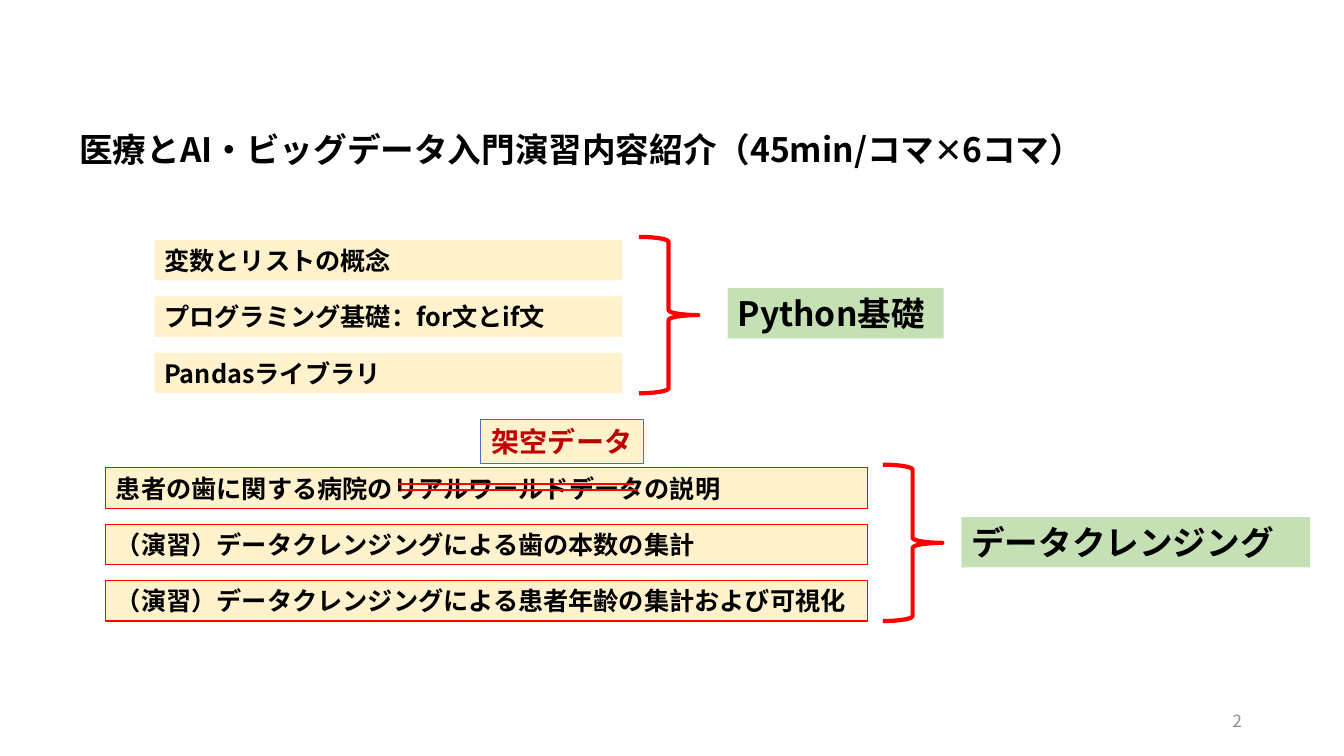
from dataclasses import dataclass

from lxml import etree
from pptx import Presentation
from pptx.dml.color import RGBColor
from pptx.enum.shapes import MSO_CONNECTOR, MSO_SHAPE
from pptx.enum.text import MSO_ANCHOR, MSO_AUTO_SIZE, PP_ALIGN
from pptx.oxml.ns import qn
from pptx.util import Cm, Pt

RECTANGLE, BRACE = MSO_SHAPE.RECTANGLE, MSO_SHAPE.RIGHT_BRACE
STRAIGHT = MSO_CONNECTOR.STRAIGHT
LEFT, CENTER, RIGHT = PP_ALIGN.LEFT, PP_ALIGN.CENTER, PP_ALIGN.RIGHT
TOP, MIDDLE = MSO_ANCHOR.TOP, MSO_ANCHOR.MIDDLE
NO_RESIZE = MSO_AUTO_SIZE.NONE

FONT = "Noto Sans CJK JP"
BLACK, RED, DARK_RED, BLUE, GRAY = "000000", "FF0000", "C00000", "4472C4", "8C8C8C"
CREAM, GREEN = "FFF2CC", "C5E0B4"
ROW_HEIGHT, ROW_PITCH = 1.02, 1.42
LABEL_HEIGHT = 1.27
BRACE_WIDTH, BRACE_HEIGHT, BRACE_RISE = 1.5, 3.94, 0.08


@dataclass
class Topic:
    """A column of rows, gathered by a brace under one label."""
    left: float
    top: float
    width: float
    rows: list[str]
    brace_left: float
    label: str
    label_left: float
    label_top: float
    label_width: float
    outline: str | None = None


@dataclass
class Strike:
    left: float
    right: float
    height: float


TOPICS = [
    Topic(3.89, 6.05, 11.79,
          ["変数とリストの概念", "プログラミング基礎：for文とif文", "Pandasライブラリ"],
          16.1, "Python基礎", 18.34, 7.26, 5.44),
    Topic(2.67, 11.79, 19.2,
          ["患者の歯に関する病院のリアルワールドデータの説明",
           "（演習）データクレンジングによる歯の本数の集計",
           "（演習）データクレンジングによる患者年齢の集計および可視化"],
          22.25, "データクレンジング", 24.23, 13.03, 8.79, RED),
]
STRIKES = [Strike(10.03, 15.98, 12.19), Strike(10.11, 16.08, 12.34)]


def color(value: str) -> RGBColor:
    return RGBColor.from_string(value)


def write(box, text: str, *, size: float, ink: str = BLACK, bold: bool = True,
          align=LEFT, anchor=MIDDLE, line_height: float | None = None) -> None:
    frame = box.text_frame
    frame.word_wrap = True
    frame.auto_size = NO_RESIZE
    frame.vertical_anchor = anchor
    frame.margin_left = Cm(0.25)
    frame.margin_right = Cm(0) if align == LEFT else Cm(0.25)
    frame.margin_top = frame.margin_bottom = Cm(0.13)
    para = frame.paragraphs[0]
    para.alignment = align
    if line_height:
        para.line_spacing = Pt(line_height)
    span = para.add_run()
    span.text = text
    span.font.name = FONT
    span.font.size = Pt(size)
    span.font.bold = bold
    span.font.color.rgb = color(ink)
    # Japanese glyphs take their own typeface entry
    east_asian = etree.SubElement(span.font._element, qn("a:ea"))
    east_asian.set("typeface", FONT)


def add_box(page, kind, left: float, top: float, width: float, height: float, *,
            fill: str | None = None, outline: str | None = None,
            line_width: float = 0.75):
    box = page.shapes.add_shape(kind, Cm(left), Cm(top), Cm(width), Cm(height))
    box.shadow.inherit = False
    if fill:
        box.fill.solid()
        box.fill.fore_color.rgb = color(fill)
    else:
        box.fill.background()
    if outline:
        box.line.color.rgb = color(outline)
        box.line.width = Pt(line_width)
    else:
        box.line.fill.background()
    return box


def add_topic(page, topic: Topic) -> None:
    for index, text in enumerate(topic.rows):
        row = add_box(page, RECTANGLE, topic.left, topic.top + index * ROW_PITCH,
                      topic.width, ROW_HEIGHT, fill=CREAM, outline=topic.outline)
        write(row, text, size=18)
    label = add_box(page, RECTANGLE, topic.label_left, topic.label_top,
                    topic.label_width, LABEL_HEIGHT, fill=GREEN)
    write(label, topic.label, size=24)
    add_box(page, BRACE, topic.brace_left, topic.top - BRACE_RISE,
            BRACE_WIDTH, BRACE_HEIGHT, outline=RED, line_width=3)


def add_strike(page, strike: Strike) -> None:
    line = page.shapes.add_connector(STRAIGHT, Cm(strike.left), Cm(strike.height),
                                     Cm(strike.right), Cm(strike.height))
    line.line.color.rgb = color(RED)
    line.line.width = Pt(1.5)
    etree.SubElement(line._element.spPr, qn("a:effectLst"))


def main() -> None:
    deck = Presentation()
    deck.slide_width, deck.slide_height = Cm(33.87), Cm(19.05)
    page = deck.slides.add_slide(deck.slide_layouts[5])

    # Title
    title = page.shapes.title
    title.left, title.top = Cm(1.75), Cm(3.12)
    title.width, title.height = Cm(26.21), Cm(1.27)
    write(title, "医療とAI・ビッグデータ入門演習内容紹介（45min/コマ✕6コマ）",
          size=24, anchor=TOP, line_height=28.8)

    # Topics with braces and labels
    for topic in TOPICS:
        add_topic(page, topic)

    # Correction above the struck-out words
    correction = add_box(page, RECTANGLE, 12.12, 10.57, 4.09, 1.12,
                         fill=CREAM, outline=BLUE)
    write(correction, "架空データ", size=20, ink=DARK_RED, align=CENTER)
    for strike in STRIKES:
        add_strike(page, strike)

    # Page number
    number = page.shapes.add_textbox(Cm(23.93), Cm(17.65), Cm(7.62), Cm(1.02))
    write(number, "2", size=12, ink=GRAY, bold=False, align=RIGHT)

    deck.save("out.pptx")


if __name__ == "__main__":
    main()
